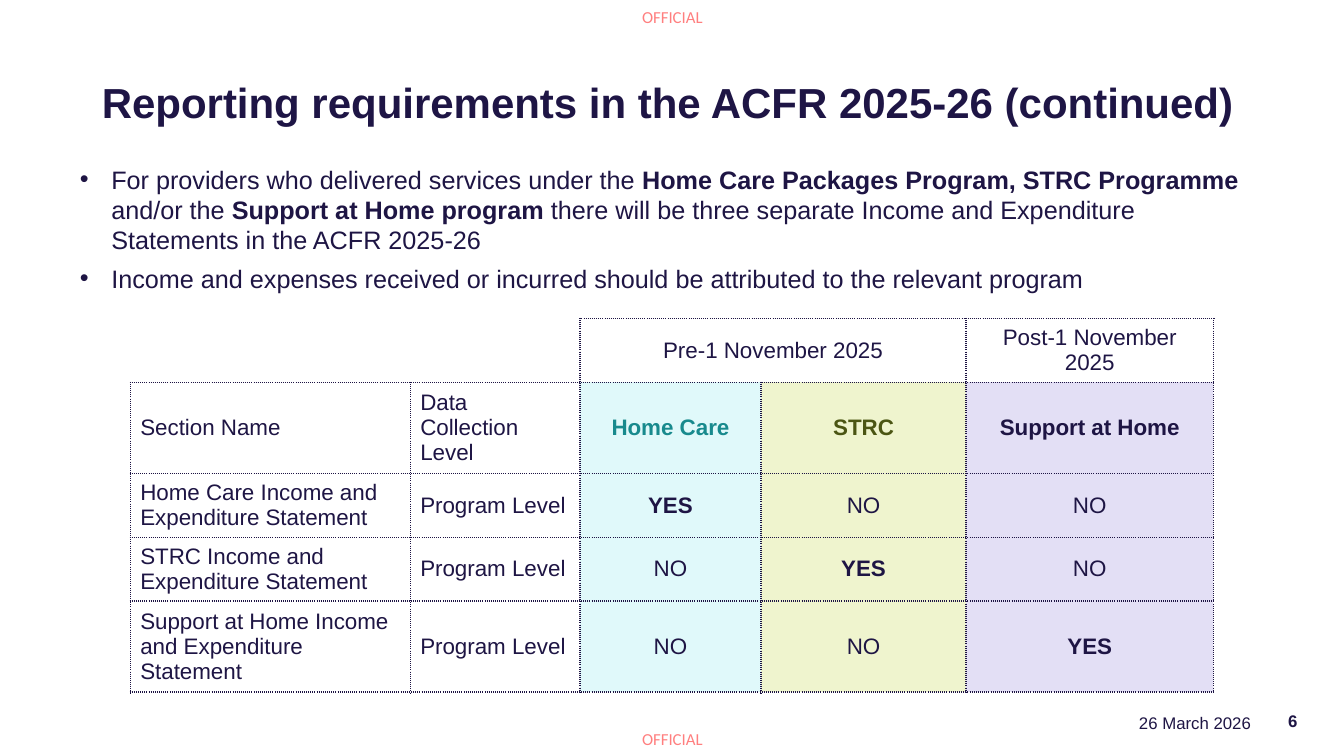
import pptx
import pptx.util
import pptx.dml.color
import pptx.enum.text
import pptx.oxml
import pptx.oxml.ns
from lxml import etree

Pt = pptx.util.Pt
RGB = pptx.dml.color.RGBColor.from_string
ALIGN = pptx.enum.text.PP_ALIGN
ANCHOR = pptx.enum.text.MSO_ANCHOR
NO_FIT = pptx.enum.text.MSO_AUTO_SIZE.NONE
qn = pptx.oxml.ns.qn

COLORS = {
    "title": "1E1545", "ink": "1E1544", "marking": "FF0000",
    "home care": "188A8D", "strc": "4B5513",
    "home care fill": "E0F9FA", "strc fill": "EFF4CE", "support fill": "E3DFF5",
}


def style_run(run, size, color="ink", bold=False, font="Arial"):
    run.font.name = font
    run.font.size = Pt(size)
    run.font.bold = bold
    run.font.color.rgb = RGB(COLORS[color])


def add_label(text, left, top, width, height, align, margin):
    label = slide.shapes.add_textbox(Pt(left), Pt(top), Pt(width), Pt(height))
    frame = label.text_frame
    frame.text = text
    frame.word_wrap = True
    frame.margin_left = frame.margin_right = Pt(2 * margin)
    frame.margin_top = frame.margin_bottom = Pt(margin)
    frame.paragraphs[0].alignment = align
    return frame


presentation = pptx.Presentation()
presentation.slide_width, presentation.slide_height = Pt(960), Pt(540)
slide = presentation.slides.add_slide(presentation.slide_layouts[1])

# Security markings at top and bottom
for marking_top in (5, 520.5):
    marking = add_label("OFFICIAL", 458.6, marking_top, 46, 14.4, ALIGN.LEFT, 0)
    marking.word_wrap = False
    marking_run = marking.paragraphs[0].runs[0]
    style_run(marking_run, 12, "marking", font="Calibri")
    marking_color = marking_run.font.fill._xPr.find(".//" + qn("a:srgbClr"))
    etree.SubElement(marking_color, qn("a:alpha"), val="50000")

# Title
title = slide.shapes.title
title.left, title.top, title.width, title.height = Pt(65.5), Pt(53.3), Pt(855), Pt(43.2)
title.text_frame.text = "Reporting requirements in the ACFR 2025-26 (continued)"
title.text_frame.auto_size = NO_FIT
title.text_frame.vertical_anchor = ANCHOR.MIDDLE
heading = title.text_frame.paragraphs[0]
heading.alignment = ALIGN.LEFT
heading.line_spacing = 0.9
style_run(heading.runs[0], 30, "title", bold=True)

# Bullets: each is a list of (text, bold)
BULLETS = [
    [("For providers who delivered services under the ", False),
     ("Home Care Packages Program, STRC Programme ", True),
     ("and/or the ", False),
     ("Support at Home program", True),
     (" there will be three separate Income and Expenditure Statements"
      " in the ACFR 2025-26", False)],
    [("Income and expenses received or incurred should be attributed"
      " to the relevant program", False)],
]
requirements = slide.placeholders[1]
requirements.left, requirements.top = Pt(57), Pt(117)
requirements.width, requirements.height = Pt(846.7), Pt(93.6)
body = requirements.text_frame
body.auto_size = NO_FIT
body.margin_left = body.margin_right = body.margin_top = body.margin_bottom = 0
for index, parts in enumerate(BULLETS):
    bullet = body.paragraphs[0] if index == 0 else body.add_paragraph()
    properties = bullet._p.get_or_add_pPr()
    properties.set("marL", str(Pt(22.5)))
    properties.set("indent", str(-Pt(22.5)))
    etree.SubElement(properties, qn("a:buFont"), typeface="Arial")
    etree.SubElement(properties, qn("a:buChar"), char="•")
    bullet.space_before = Pt(3 if index else 0)
    bullet.space_after = Pt(3)
    for text, bold in parts:
        part = bullet.add_run()
        part.text = text
        style_run(part, 18, bold=bold)

# Table of statements by program
ROWS = [
    ["", "", "Pre-1 November 2025", "", "Post-1 November 2025"],
    ["Section Name", "Data Collection Level", "Home Care", "STRC", "Support at Home"],
    ["Home Care Income and Expenditure Statement", "Program Level", "YES", "NO", "NO"],
    ["STRC Income and Expenditure Statement", "Program Level", "NO", "YES", "NO"],
    ["Support at Home Income and Expenditure Statement", "Program Level", "NO", "NO", "YES"],
]
COLUMN_WIDTHS = [200, 121.3, 129.3, 146.5, 176.7]
ROW_HEIGHTS = [45.6, 65, 45.6, 45.6, 65]
PROGRAM_FILLS = {2: "home care fill", 3: "strc fill", 4: "support fill"}
HEADER_COLORS = {2: "home care", 3: "strc"}

statements = slide.shapes.add_table(
    5, 5, Pt(93), Pt(227.5), Pt(sum(COLUMN_WIDTHS)), Pt(sum(ROW_HEIGHTS))).table
statements.first_row = statements.horz_banding = False
for column, width in zip(statements.columns, COLUMN_WIDTHS):
    column.width = Pt(width)
for row, height in zip(statements.rows, ROW_HEIGHTS):
    row.height = Pt(height)
statements.cell(0, 2).merge(statements.cell(0, 3))

for r, texts in enumerate(ROWS):
    for c, text in enumerate(texts):
        cell = statements.cell(r, c)
        cell.vertical_anchor = ANCHOR.MIDDLE

        # Dotted borders, open around the empty corner
        open_sides = {(0, 0): "LRT", (0, 1): "LT"}.get((r, c), "")
        cell_properties = cell._tc.get_or_add_tcPr()
        for side in "LRTB":
            border = etree.SubElement(cell_properties, qn("a:ln" + side), w=str(Pt(1)))
            if side in open_sides:
                etree.SubElement(border, qn("a:noFill"))
                continue
            line_fill = etree.SubElement(border, qn("a:solidFill"))
            etree.SubElement(line_fill, qn("a:srgbClr"), val=COLORS["ink"])
            etree.SubElement(border, qn("a:prstDash"), val="sysDot")

        if r > 0 and c in PROGRAM_FILLS:
            cell.fill.solid()
            cell.fill.fore_color.rgb = RGB(COLORS[PROGRAM_FILLS[c]])
        else:
            cell.fill.background()

        if text:
            cell.text_frame.text = text
            entry = cell.text_frame.paragraphs[0]
            entry.alignment = ALIGN.CENTER if c >= 2 else ALIGN.LEFT
            program_header = r == 1 and c >= 2
            style_run(entry.runs[0], 16,
                      HEADER_COLORS.get(c, "ink") if program_header else "ink",
                      bold=program_header or text == "YES")

# Date and slide number
date = add_label("26 March 2026", 684.7, 505.4, 216, 21.6, ALIGN.RIGHT, 3.6)
style_run(date.paragraphs[0].runs[0], 12)
page_number = add_label("6", 901.4, 500.4, 32.4, 28.8, ALIGN.RIGHT, 3.6)
page_number.vertical_anchor = ANCHOR.MIDDLE
style_run(page_number.paragraphs[0].runs[0], 12, "title", bold=True)

presentation.save("out.pptx")
